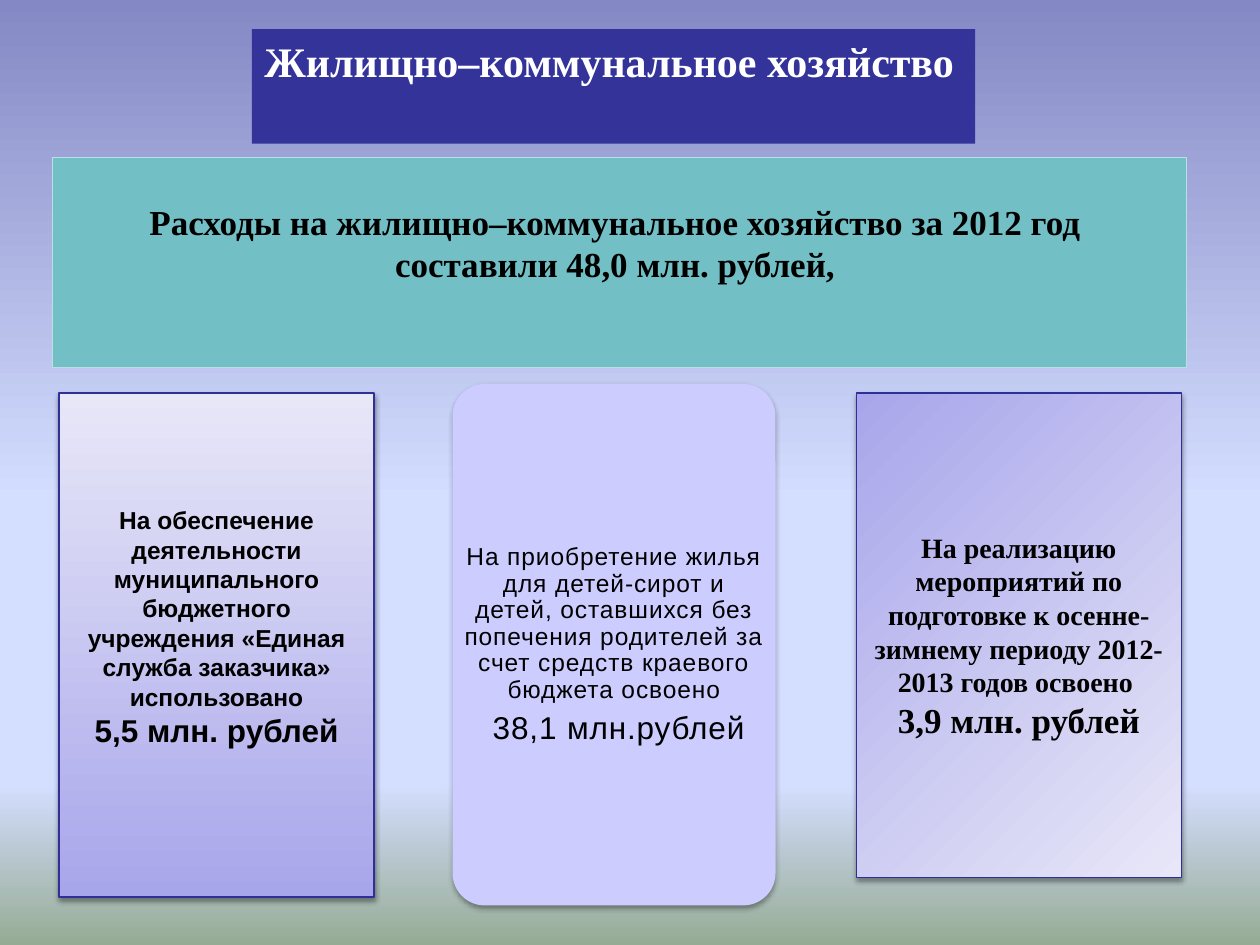
from lxml import etree
from pptx import Presentation
from pptx.dml.color import RGBColor
from pptx.enum.shapes import MSO_SHAPE
from pptx.enum.text import MSO_ANCHOR, PP_ALIGN
from pptx.oxml.ns import qn
from pptx.util import Pt

RECTANGLE = MSO_SHAPE.RECTANGLE
ROUNDED = MSO_SHAPE.ROUNDED_RECTANGLE
TOP, MIDDLE = MSO_ANCHOR.TOP, MSO_ANCHOR.MIDDLE
LEFT, CENTER = PP_ALIGN.LEFT, PP_ALIGN.CENTER

BLACK = RGBColor(0x00, 0x00, 0x00)
WHITE = RGBColor(0xFF, 0xFF, 0xFF)
INDIGO = RGBColor(0x33, 0x33, 0x99)
DARK_INDIGO = RGBColor(0x2F, 0x2F, 0x98)
TEAL = RGBColor(0x72, 0xBF, 0xC5)
PALE_TEAL = RGBColor(0xBB, 0xE0, 0xE3)
LILAC = RGBColor(0xCC, 0xCC, 0xFF)
PALE_LILAC = RGBColor(0xE8, 0xE7, 0xF8)
DEEP_LILAC = RGBColor(0xA8, 0xA6, 0xEA)
SKY = RGBColor(0xD4, 0xDE, 0xFF)
DUSK = RGBColor(0x84, 0x88, 0xC4)
GRASS = RGBColor(0x96, 0xAB, 0x94)

SERIF, SANS = "Times New Roman", "Arial"


class SlideBuilder:
    def __init__(self, page):
        self.page = page

    def gradient(self, fill, owner, stops, angle):
        """Fill with (percent, colour) stops; the angle runs clockwise."""
        fill.gradient()
        fill.gradient_angle = (360 - angle) % 360
        stop_list = next(owner.iter(qn("a:gsLst")))
        for stop in list(stop_list):
            stop_list.remove(stop)
        for percent, color in stops:
            stop = etree.SubElement(stop_list, qn("a:gs"), pos=str(percent * 1000))
            etree.SubElement(stop, qn("a:srgbClr"), val=str(color))

    def background(self, stops, angle):
        self.gradient(self.page.background.fill, self.page.element, stops, angle)

    def box(self, place, fill=None, line=None, line_width=0.75, kind=RECTANGLE):
        box = self.page.shapes.add_shape(kind, *(Pt(length) for length in place))
        box.shadow.inherit = False
        if fill is not None:
            box.fill.solid()
            box.fill.fore_color.rgb = fill
        if line is None:
            box.line.fill.background()
        else:
            box.line.color.rgb = line
            box.line.width = Pt(line_width)
        return box

    def gradient_box(self, place, stops, angle, line_width):
        box = self.box(place, line=DARK_INDIGO, line_width=line_width)
        self.gradient(box.fill, box.element.spPr, stops, angle)
        self.drop_shadow(box, 38, 1.6)
        return box

    def drop_shadow(self, box, opacity, distance):
        effects = box.element.spPr.find(qn("a:effectLst"))
        shadow = etree.SubElement(
            effects, qn("a:outerShdw"), blurRad=str(Pt(3.1)), dist=str(Pt(distance)),
            dir="5400000", rotWithShape="0")
        color = etree.SubElement(shadow, qn("a:srgbClr"), val=str(BLACK))
        etree.SubElement(color, qn("a:alpha"), val=str(opacity * 1000))

    def label(self, box, lines, font, color=BLACK, bold=True, align=CENTER,
              anchor=MIDDLE, bottom=3.6):
        """Put (text, size) lines in the box, one paragraph each."""
        frame = box.text_frame
        frame.word_wrap = True
        frame.vertical_anchor = anchor
        frame.margin_bottom = Pt(bottom)
        frame.text = "\n".join(text for text, size in lines)
        for para, (text, size) in zip(frame.paragraphs, lines):
            para.alignment = align
            for span in para.runs:
                span.font.name = font
                span.font.size = Pt(size)
                span.font.bold = bold
                span.font.color.rgb = color

    def loosen(self, box, margin, line_spacing, space_after, tracking):
        """Set narrow margins, and the spacing of lines and letters."""
        frame = box.text_frame
        frame.margin_left = frame.margin_right = Pt(margin)
        frame.margin_top = frame.margin_bottom = Pt(margin)
        for para in frame.paragraphs:
            para.line_spacing = line_spacing
            para.space_after = Pt(space_after)
        for properties in box.element.iter(qn("a:rPr")):
            properties.set("spc", str(int(tracking * 100)))


def main():
    deck = Presentation()
    deck.slide_width, deck.slide_height = Pt(720), Pt(540)
    builder = SlideBuilder(deck.slides.add_slide(deck.slide_layouts[6]))
    builder.background([(0, DUSK), (53, SKY), (83, SKY), (100, GRASS)], 90)

    service = builder.gradient_box(
        (33.8, 224.6, 180, 288), [(0, PALE_LILAC), (100, DEEP_LILAC)], 90, 1.25)
    builder.label(service, [
        ("На обеспечение деятельности муниципального бюджетного учреждения "
         "«Единая служба заказчика» использовано", 14),
        ("5,5 млн. рублей", 18)], SANS, bottom=24)

    heading = builder.box((144, 16.6, 413.3, 65.5), INDIGO)
    builder.label(heading, [("Жилищно–коммунальное хозяйство", 24)], SERIF,
                  color=WHITE, align=LEFT, anchor=TOP)

    total = builder.box((30, 90, 648, 120), TEAL, PALE_TEAL)
    builder.label(total, [
        ("Расходы на жилищно–коммунальное хозяйство за 2012 год ", 20),
        ("составили 48,0 млн. рублей, ", 20)], SERIF, bottom=26.6)

    winter = builder.gradient_box(
        (489.4, 224.6, 185.6, 276.8), [(0, DEEP_LILAC), (100, PALE_LILAC)], 45, 0.75)
    builder.label(winter, [
        ("На реализацию мероприятий по подготовке к осенне-зимнему периоду "
         "2012-2013 годов освоено ", 16),
        ("3,9 млн. рублей", 20)], SERIF)

    card = builder.box((258.6, 219.4, 184.6, 298), LILAC, kind=ROUNDED)
    card.adjustments[0] = 0.1
    builder.drop_shadow(card, 35, 1.8)
    housing = builder.box((263, 228.4, 175.7, 280.6), LILAC)
    builder.label(housing, [
        ("На приобретение жилья для детей-сирот и детей, оставшихся без "
         "попечения родителей за счет средств краевого бюджета освоено", 14),
        (" 38,1 млн.рублей", 18)], SANS, bold=False)
    builder.loosen(housing, margin=2.2, line_spacing=0.9, space_after=5, tracking=0.5)

    deck.save("out.pptx")


if __name__ == "__main__":
    main()
